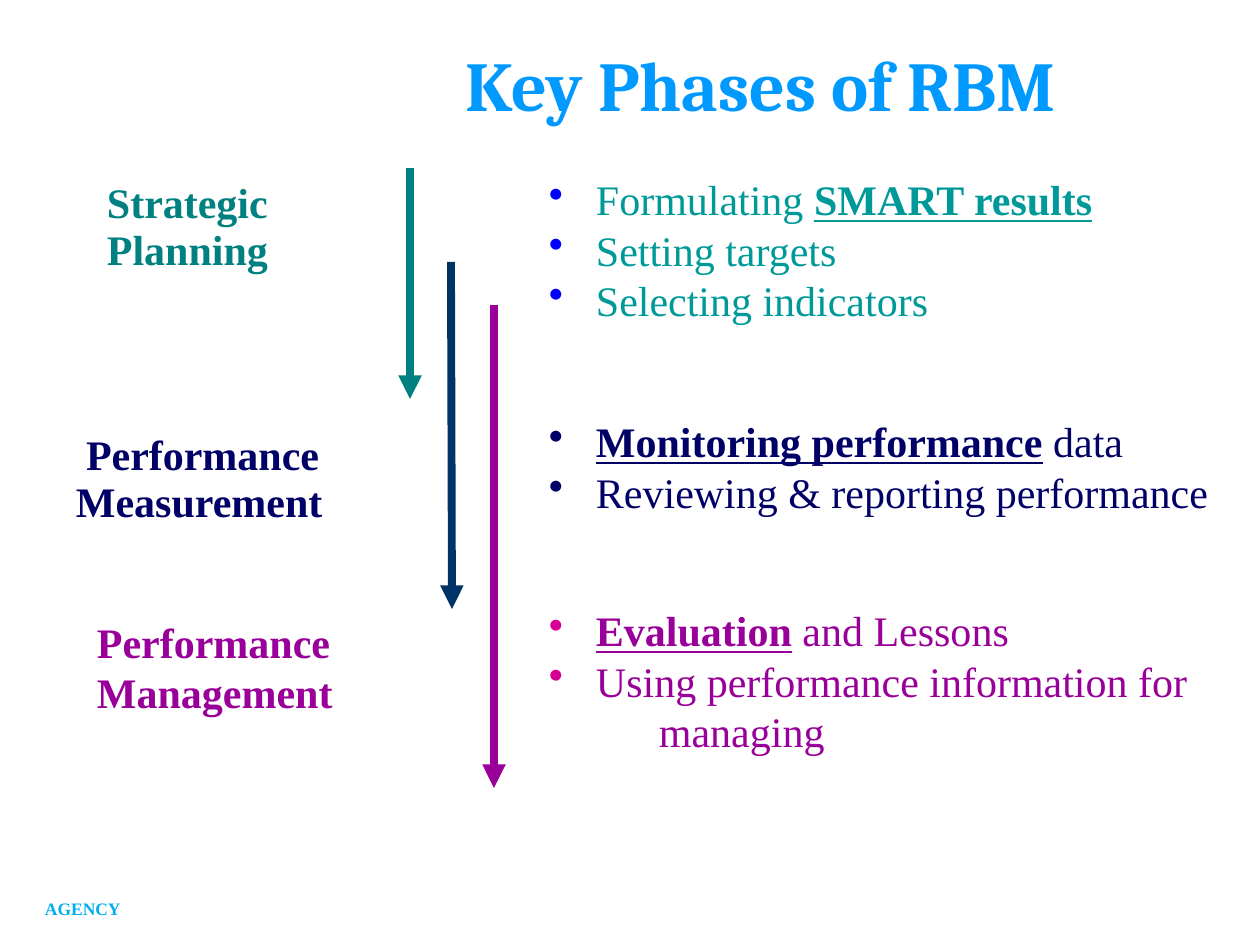
from pptx import Presentation
from pptx.dml.color import RGBColor as RGB
from pptx.enum.shapes import MSO_CONNECTOR as Conn
from pptx.enum.text import MSO_ANCHOR as Anchor, PP_ALIGN as Align
from pptx.oxml.ns import qn
from pptx.util import Emu, Pt
from lxml.etree import SubElement as Sub

SKY = RGB(0x00, 0x99, 0xFF)
TEAL = RGB(0x00, 0x80, 0x80)
AQUA = RGB(0x00, 0x99, 0x99)
NAVY = RGB(0x00, 0x00, 0x66)
STEEL = RGB(0x00, 0x33, 0x66)
PLUM = RGB(0x99, 0x00, 0x99)
BLUE = RGB(0x00, 0x00, 0xFF)
PINK = RGB(0xD6, 0x00, 0x93)
CYAN = RGB(0x00, 0xAE, 0xEF)
SERIF = "Times New Roman"
HEAD = "Cambria"


def px(n):
    return Emu(round(n * 914400 / 126))


class Deck:
    def __init__(self, wide, high):
        self.show = Presentation()
        self.show.slide_width = px(wide)
        self.show.slide_height = px(high)
        self.slide = self.show.slides.add_slide(self.show.slide_layouts[6])

    def frame(self, box, left=13, top=6):
        text = self.slide.shapes.add_textbox(*map(px, box)).text_frame
        text.word_wrap = True
        text.margin_left, text.margin_top = px(left), px(top)
        return text

    def para(self, text, first):
        return text.paragraphs[0] if first else text.add_paragraph()

    def style(self, para, color, size=24, bold=None, name=SERIF):
        font = para.font
        font.size, font.name, font.bold = Pt(size), name, bold
        font.color.rgb = color

    def title(self, box, words, left):
        text = self.frame(box, left)
        text.vertical_anchor = Anchor.MIDDLE
        para = text.paragraphs[0]
        para.text, para.alignment = words, Align.CENTER
        self.style(para, SKY, 40, True, HEAD)

    def label(self, box, lines, color, size=24, top=6, space=None, gap=0, push=0):
        text = self.frame(box, top=top)
        for i, line in enumerate(lines):
            para = self.para(text, i == 0)
            para.text, para.line_spacing = line, space
            if i:
                para.space_before = Pt(gap)
            elif push:
                para._p.get_or_add_pPr().set("marL", str(px(push)))
            self.style(para, color, size, True)

    def bullets(self, box, items, color, dot):
        text = self.frame(box)
        for i, item in enumerate(items):
            para = self.para(text, i == 0)
            prop = para._p.get_or_add_pPr()
            prop.set("marL", str(px(47)))
            prop.set("indent", str(-px(47)))
            Sub(Sub(prop, qn("a:buClr")), qn("a:srgbClr"), val=str(dot))
            Sub(prop, qn("a:buChar"), char="•")
            tabs = Sub(prop, qn("a:tabLst"))
            Sub(tabs, qn("a:tab"), pos=str(px(110)), algn="l")
            self.style(para, color)
            for words, strong in item:
                if strong:
                    run = para.add_run()
                    run.text = words
                    run.font.bold = run.font.underline = True
                    continue
                for j, part in enumerate(words.split("\n")):
                    if j:
                        para.add_line_break()
                    para.add_run().text = part

    def arrow(self, x1, y1, x2, y2, color):
        line = self.slide.shapes.add_connector(
            Conn.STRAIGHT, px(x1), px(y1), px(x2), px(y2))
        line.line.color.rgb, line.line.width = color, Pt(4.5)
        Sub(line.line._get_or_add_ln(), qn("a:tailEnd"), type="triangle")
        Sub(line._element.spPr, qn("a:effectLst"))


def main():
    deck = Deck(1260, 945)
    deck.title((53, 21, 1165, 126), "Key Phases of RBM", 263)

    deck.label((94, 179, 189, 98), ["Strategic", "Planning"], TEAL,
               top=19, space=0.5, gap=12.6)
    deck.label((63, 431, 273, 110), ["Performance", "Measurement"], NAVY,
               top=19, space=0.5, gap=12.6, push=10)
    deck.label((84, 630, 262, 93), ["Performance", "Management"], PLUM,
               space=0.55, gap=13)

    deck.bullets((536, 168, 724, 189), [
        [("Formulating ", False), ("SMART results", True)],
        [("Setting targets", False)],
        [("Selecting indicators", False)],
    ], AQUA, BLUE)
    deck.bullets((536, 410, 724, 126), [
        [("Monitoring performance", True), (" data", False)],
        [("Reviewing & reporting performance", False)],
    ], NAVY, NAVY)
    deck.bullets((536, 599, 724, 199), [
        [("Evaluation", True), (" and Lessons", False)],
        [("Using performance information for\n\tmanaging", False)],
    ], PLUM, PINK)

    deck.arrow(410, 168, 410, 399, TEAL)
    deck.arrow(451, 262, 452, 609, STEEL)
    deck.arrow(494, 305, 494, 788, PLUM)

    deck.label((32, 892, 221, 34), ["AGENCY"], CYAN, size=10)
    deck.show.save("out.pptx")


if __name__ == "__main__":
    main()
